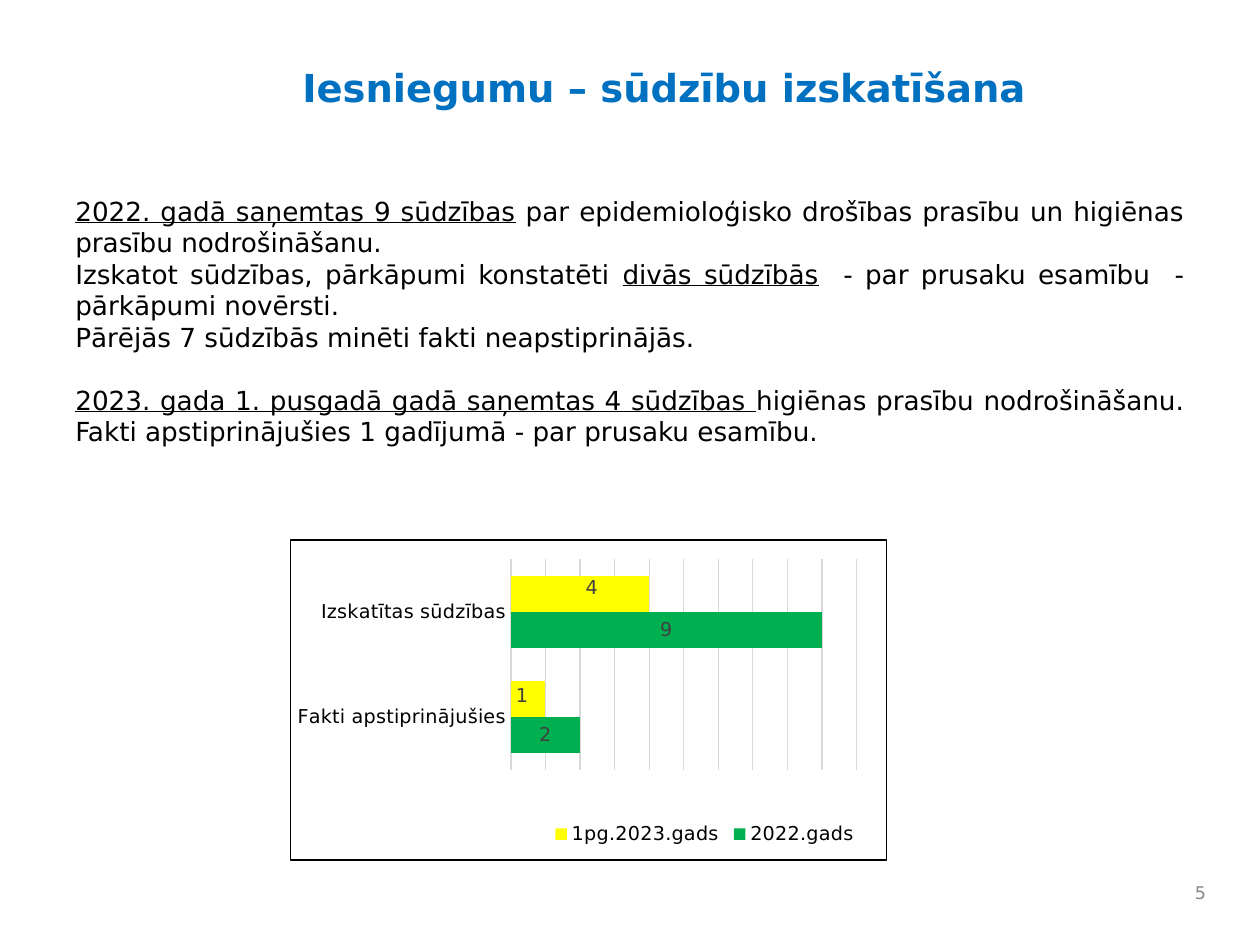
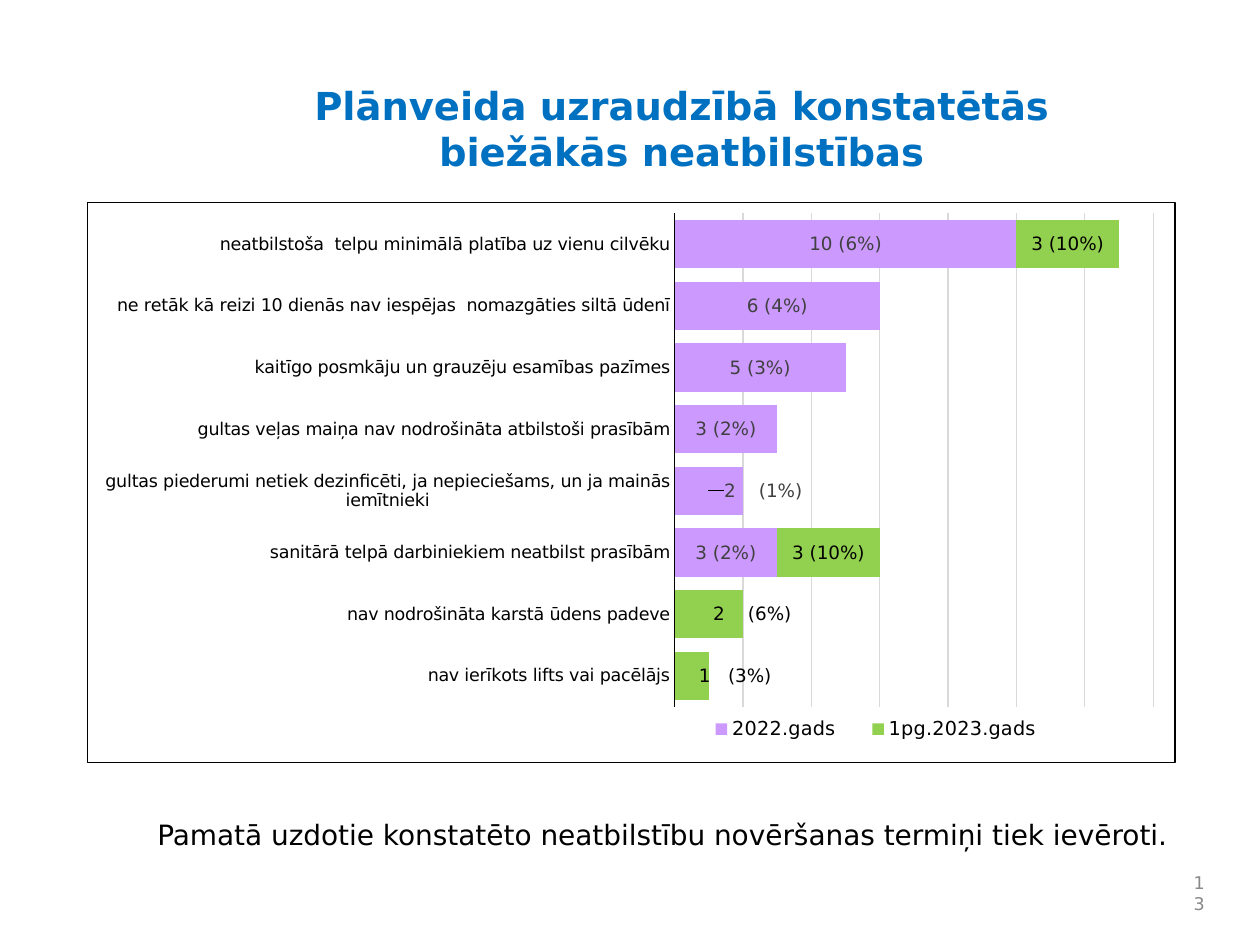
import pptx
import pptx.util
import pptx.chart.data
import pptx.dml.color
import pptx.enum.chart
import pptx.enum.text
import pptx.oxml
import pptx.oxml.ns
from pptx.util import Inches

FONT = "DejaVu Sans"
COLORS = {
    "title": "0070C0",
    "text": "000000",
    "label": "404040",
    "number": "898989",
    "grid": "D9D9D9",
    "green": "00B050",
    "yellow": "FFFF00",
    "violet": "CC99FF",
    "lime": "92D050",
}
ALIGN = pptx.enum.text.PP_ALIGN
ANCHOR = pptx.enum.text.MSO_ANCHOR
CHART_TYPE = pptx.enum.chart.XL_CHART_TYPE
NS = pptx.oxml.ns.nsdecls("c", "a")


def rgb(name):
    return pptx.dml.color.RGBColor.from_string(COLORS[name])


def manual_layout(x, y, w=None, h=None, inner=False, offset=False):
    """Chart layout element, in fractions of the chart area."""
    parts = ['<c:layoutTarget val="inner"/>'] if inner else []
    if not offset:
        parts += [f'<c:{axis}Mode val="edge"/>' for axis in "xy"]
    sizes = {"x": x, "y": y, "w": w, "h": h}
    parts += [f'<c:{key} val="{value}"/>' for key, value in sizes.items() if value is not None]
    return pptx.oxml.parse_xml(
        f"<c:layout {NS}><c:manualLayout>{''.join(parts)}</c:manualLayout></c:layout>")


class Deck:
    """Shared style plus the slide being filled."""

    def __init__(self):
        self.prs = pptx.Presentation()
        self.prs.slide_width, self.prs.slide_height = Inches(10), Inches(7.5)
        self.slide = None

    def style(self, font, size, color="text", bold=None):
        font.name, font.size, font.bold = FONT, pptx.util.Pt(size), bold
        font.color.rgb = rgb(color)

    def new_slide(self, title, box, align, number, number_box):
        self.slide = self.prs.slides.add_slide(self.prs.slide_layouts[5])
        heading = self.slide.shapes.title
        heading.left, heading.top, heading.width, heading.height = map(Inches, box)
        frame = heading.text_frame
        frame.text = title
        frame.auto_size = pptx.enum.text.MSO_AUTO_SIZE.NONE
        frame.vertical_anchor = ANCHOR.TOP
        frame.paragraphs[0].alignment = align
        self.style(frame.paragraphs[0].font, 22, "title", True)
        self.text([[number]], number_box, 10, "number", ALIGN.RIGHT, ANCHOR.MIDDLE)

    def text(self, paragraphs, box, size, color="text", align=ALIGN.LEFT,
             anchor=ANCHOR.TOP, wrap=True):
        """Each paragraph is a list of strings; a (string,) tuple is underlined."""
        frame = self.slide.shapes.add_textbox(*map(Inches, box)).text_frame
        frame.word_wrap, frame.vertical_anchor = wrap, anchor
        for i, pieces in enumerate(paragraphs):
            paragraph = frame.add_paragraph() if i else frame.paragraphs[0]
            paragraph.alignment = align
            self.style(paragraph.font, size, color)
            for piece in pieces:
                run = paragraph.add_run()
                underlined = isinstance(piece, tuple)
                run.text = piece[0] if underlined else piece
                if underlined:
                    run.font.underline = True
        return frame

    def bar_chart(self, kind, box, categories, series, axis_max, step, gap, overlap,
                  axis_size, axis_color, label_size, plot_area, legend_area):
        data = pptx.chart.data.CategoryChartData()
        data.categories = categories
        for entry in series:
            data.add_series(entry["name"], entry["values"])
        chart = self.slide.shapes.add_chart(kind, *map(Inches, box), data).chart
        chart.has_title = False
        self.style(chart.font, 10)

        # Frame around the chart
        border = pptx.oxml.parse_xml(
            f'<c:spPr {NS}><a:noFill/><a:ln w="9525"><a:solidFill>'
            f'<a:srgbClr val="{COLORS["text"]}"/></a:solidFill></a:ln></c:spPr>')
        chart._chartSpace.find(pptx.oxml.ns.qn("c:chart")).addnext(border)

        # Axes and plot area
        cat_axis, val_axis = chart.category_axis, chart.value_axis
        cat_axis.major_tick_mark = pptx.enum.chart.XL_TICK_MARK.NONE
        self.style(cat_axis.tick_labels.font, axis_size)
        val_axis.visible = False
        val_axis.minimum_scale, val_axis.maximum_scale = 0, axis_max
        val_axis.major_unit = step
        val_axis.has_major_gridlines = True
        for line, color in ((cat_axis.format.line, axis_color),
                            (val_axis.major_gridlines.format.line, "grid")):
            line.color.rgb, line.width = rgb(color), pptx.util.Pt(0.75)
        plot_element = chart._chartSpace.xpath("c:chart/c:plotArea")[0]
        for old in plot_element.xpath("c:layout"):
            plot_element.remove(old)
        plot_element.insert(0, manual_layout(*plot_area, inner=True))

        # Legend
        chart.has_legend = True
        legend = chart.legend
        legend.position = pptx.enum.chart.XL_LEGEND_POSITION.BOTTOM
        legend.include_in_layout = False
        self.style(legend.font, 11)
        for old in legend._element.xpath("c:layout"):
            legend._element.remove(old)
        legend._element.xpath("c:legendPos")[0].addnext(manual_layout(*legend_area))

        # Bars and their labels
        plot = chart.plots[0]
        plot.gap_width, plot.overlap, plot.vary_by_categories = gap, overlap, False
        for bars, entry in zip(plot.series, series):
            bars.format.fill.solid()
            bars.format.fill.fore_color.rgb = rgb(entry["color"])
            self.bar_labels(bars, entry, label_size)
        return chart

    def bar_labels(self, bars, entry, size):
        center = pptx.enum.chart.XL_LABEL_POSITION.CENTER
        labels = bars.data_labels
        labels.show_value, labels.position = True, center
        self.style(labels.font, size, entry["label_color"])
        texts, shifts = entry.get("texts", {}), entry.get("shifts", {})
        for i in sorted(texts.keys() | shifts.keys()):
            label = bars.points[i].data_label
            if i in texts:
                paragraph = label.text_frame.paragraphs[0]
                run = paragraph.add_run()
                run.text = texts[i]
                self.style(run.font, size, entry["label_color"])
            else:
                self.style(label.font, size, entry["label_color"])
            label.position = center
            if i in shifts:
                index = bars._element.xpath(f"c:dLbls/c:dLbl/c:idx[@val='{i}']")[0]
                index.addnext(manual_layout(*shifts[i], offset=True))


def complaints_slide(deck):
    deck.new_slide("Iesniegumu – sūdzību izskatīšana", (2.3, 0.46, 6.37, 0.47),
                   ALIGN.LEFT, "5", (9.21, 6.92, 0.46, 0.33))
    summary = deck.text([
        [("2022. gadā saņemtas 9 sūdzības",),
         " par epidemioloģisko drošības prasību un higiēnas prasību nodrošināšanu."],
        ["Izskatot sūdzības, pārkāpumi konstatēti ", ("divās sūdzībās",),
         "  - par prusaku esamību  - pārkāpumi novērsti."],
        ["Pārējās 7 sūdzībās minēti fakti neapstiprinājās."],
        [("2023. gada 1. pusgadā gadā saņemtas 4 sūdzības ",),
         "higiēnas prasību nodrošināšanu. "
         "Fakti apstiprinājušies 1 gadījumā - par prusaku esamību."],
    ], (0.5, 1.5, 9, 2.37), 15, align=ALIGN.JUSTIFY)
    summary.paragraphs[-1].space_before = pptx.util.Pt(18)
    deck.bar_chart(
        CHART_TYPE.BAR_CLUSTERED, (2.3, 4.28, 4.74, 2.55),
        ["Fakti apstiprinājušies", "Izskatītas sūdzības"],
        [{"name": "2022.gads", "values": (2, 9), "color": "green", "label_color": "label"},
         {"name": "1pg.2023.gads", "values": (1, 4), "color": "yellow", "label_color": "label",
          "shifts": {0: (-0.01, -0.01), 1: (0.02, -0.02)}}],
        axis_max=10, step=1, gap=94, overlap=0, axis_size=11, axis_color="grid",
        label_size=11, plot_area=(0.37, 0.06, 0.58, 0.66),
        legend_area=(0.43, 0.87, 0.53, 0.1))


def findings_slide(deck):
    deck.new_slide("Plānveida uzraudzībā konstatētās biežākās neatbilstības",
                   (1.78, 0.6, 7.26, 0.89), ALIGN.CENTER, "13", (9.33, 6.92, 0.33, 0.33))
    findings = [
        "nav ierīkots lifts vai pacēlājs",
        "nav nodrošināta karstā ūdens padeve",
        "sanitārā telpā darbiniekiem neatbilst prasībām",
        "gultas piederumi netiek dezinficēti, ja nepieciešams, un ja mainās iemītnieki",
        "gultas veļas maiņa nav nodrošināta atbilstoši prasībām",
        "kaitīgo posmkāju un grauzēju esamības pazīmes",
        "ne retāk kā reizi 10 dienās nav iespējas  nomazgāties siltā ūdenī",
        "neatbilstoša  telpu minimālā platība uz vienu cilvēku",
    ]
    deck.bar_chart(
        CHART_TYPE.BAR_STACKED, (0.69, 1.6, 8.64, 4.46), findings,
        [{"name": "2022.gads", "values": (None, None, 3, 2, 3, 5, 6, 10),
          "color": "violet", "label_color": "label",
          "texts": {2: "3 (2%)", 3: "2    (1%)", 4: "3 (2%)", 5: "5 (3%)",
                    6: "6 (4%)", 7: "10 (6%)"},
          "shifts": {3: (0.05, 0)}},
         {"name": "1pg.2023.gads", "values": (1, 2, 3, None, None, None, None, 3),
          "color": "lime", "label_color": "text",
          "texts": {0: "1   (3%)", 1: "2    (6%)", 2: "3 (10%)", 7: "3 (10%)"},
          "shifts": {0: (0.04, 0), 1: (0.04, 0)}}],
        axis_max=14, step=2, gap=28, overlap=100, axis_size=10, axis_color="text",
        label_size=10.5, plot_area=(0.54, 0.02, 0.44, 0.88),
        legend_area=(0.55, 0.9, 0.35, 0.08))
    deck.text([["Pamatā uzdotie konstatēto neatbilstību novēršanas termiņi tiek ievēroti."]],
              (1.15, 6.44, 8.35, 0.37), 16, wrap=False)


def main():
    deck = Deck()
    complaints_slide(deck)
    findings_slide(deck)
    deck.prs.save("out.pptx")


if __name__ == "__main__":
    main()
